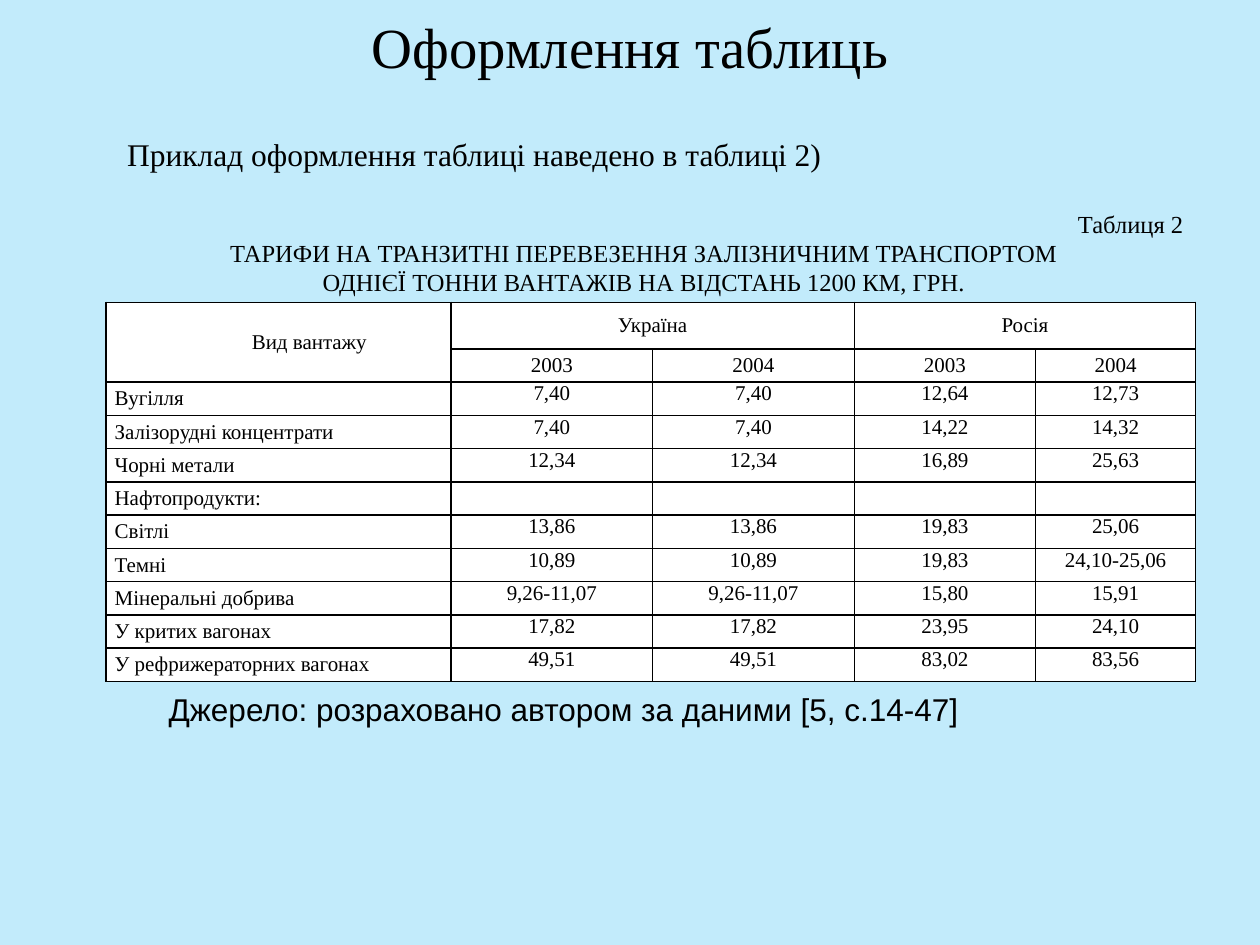
from dataclasses import dataclass

from lxml import etree
from pptx import Presentation
from pptx import util as u
from pptx.dml.color import RGBColor
from pptx.enum import text as t
from pptx.oxml import ns

COLORS = {"background": "C2EBFB", "ink": "000000", "cell": "FFFFFF"}
SERIF = "Times New Roman"
INDENT = 0.49
LEFT, CENTER, RIGHT, JUSTIFY = (
    t.PP_ALIGN.LEFT, t.PP_ALIGN.CENTER, t.PP_ALIGN.RIGHT, t.PP_ALIGN.JUSTIFY)
TOP, MIDDLE = t.MSO_ANCHOR.TOP, t.MSO_ANCHOR.MIDDLE


@dataclass
class Line:
    wording: str
    align: t.PP_ALIGN
    size: float
    font: str = SERIF
    indent: float = 0
    space_after: float = 0


@dataclass
class Block:
    left: float
    top: float
    width: float
    height: float
    lines: list[Line]
    anchor: t.MSO_ANCHOR = TOP


BLOCKS = [
    Block(0.5, 0.02, 9, 0.69, [Line("Оформлення таблиць", CENTER, 32.4)], MIDDLE),
    Block(0.42, 1.02, 9.2, 0.4, [
        Line("Приклад оформлення таблиці наведено в таблиці 2)", JUSTIFY, 18,
             indent=INDENT, space_after=6)]),
    Block(0.24, 1.6, 9.25, 0.81, [
        Line("Таблиця 2", RIGHT, 14, indent=INDENT),
        Line("ТАРИФИ НА ТРАНЗИТНІ ПЕРЕВЕЗЕННЯ ЗАЛІЗНИЧНИМ ТРАНСПОРТОМ", CENTER, 14,
             indent=INDENT),
        Line("ОДНІЄЇ ТОННИ ВАНТАЖІВ НА ВІДСТАНЬ 1200 КМ, ГРН.", CENTER, 14,
             indent=INDENT)], MIDDLE),
    Block(0.75, 5.43, 7.24, 0.4, [
        Line("Джерело: розраховано автором за даними [5, с.14-47]", JUSTIFY, 18,
             "Arial", INDENT)]),
]

COLUMN_WIDTHS = [2.74, 1.6, 1.6, 1.44, 1.27]
TABLE_HEIGHT, HEADER_HEIGHT = 3.01, 0.37
HEADER_ROWS = 2
TARIFFS = [
    ["Вид вантажу", "Україна", "", "Росія", ""],
    ["", "2003", "2004", "2003", "2004"],
    ["Вугілля", "7,40", "7,40", "12,64", "12,73"],
    ["Залізорудні концентрати", "7,40", "7,40", "14,22", "14,32"],
    ["Чорні метали", "12,34", "12,34", "16,89", "25,63"],
    ["Нафтопродукти:", "", "", "", ""],
    ["Світлі", "13,86", "13,86", "19,83", "25,06"],
    ["Темні", "10,89", "10,89", "19,83", "24,10-25,06"],
    ["Мінеральні добрива", "9,26-11,07", "9,26-11,07", "15,80", "15,91"],
    ["У критих вагонах", "17,82", "17,82", "23,95", "24,10"],
    ["У рефрижераторних вагонах", "49,51", "49,51", "83,02", "83,56"],
]
MERGES = [((0, 0), (1, 0)), ((0, 1), (0, 2)), ((0, 3), (0, 4))]


def set_attributes(target, values: dict) -> None:
    for name, value in values.items():
        setattr(target, name, value)


def write_line(paragraph, line: Line) -> None:
    set_attributes(paragraph, {
        "alignment": line.align, "space_after": u.Pt(line.space_after)})
    if line.indent:
        properties = paragraph._p.get_or_add_pPr()
        properties.set("marL", "0")
        properties.set("indent", str(u.Inches(line.indent)))
    if not line.wording:
        # An empty cell still needs its text size, or the row grows.
        etree.SubElement(paragraph._p, ns.qn("a:endParaRPr"), sz=str(line.size * 100))
        return
    run = paragraph.add_run()
    run.text = line.wording
    set_attributes(run.font, {"name": line.font, "size": u.Pt(line.size)})
    run.font.color.rgb = RGBColor.from_string(COLORS["ink"])


def add_block(slide, block: Block) -> None:
    frame = slide.shapes.add_textbox(*map(
        u.Inches, (block.left, block.top, block.width, block.height))).text_frame
    set_attributes(frame, {"word_wrap": True, "vertical_anchor": block.anchor})
    for index, line in enumerate(block.lines):
        write_line(frame.add_paragraph() if index else frame.paragraphs[0], line)


def add_borders(cell) -> None:
    """Outline the cell; the schema wants borders ahead of the fill."""
    properties = cell._tc.get_or_add_tcPr()
    for index, side in enumerate(("lnL", "lnR", "lnT", "lnB")):
        border = etree.Element(ns.qn(f"a:{side}"), w=str(u.Pt(1)))
        fill = etree.SubElement(border, ns.qn("a:solidFill"))
        etree.SubElement(fill, ns.qn("a:srgbClr"), val=COLORS["ink"])
        properties.insert(index, border)


def fill_cell(cell, row: int, column: int, wording: str) -> None:
    is_header, is_cargo = row < HEADER_ROWS, column == 0
    set_attributes(cell, {
        "margin_left": u.Inches(0.07), "margin_right": u.Inches(0.07),
        "margin_top": 0, "margin_bottom": 0,
        "vertical_anchor": MIDDLE if is_header or is_cargo else TOP})
    cell.fill.solid()
    cell.fill.fore_color.rgb = RGBColor.from_string(COLORS["cell"])
    add_borders(cell)
    write_line(cell.text_frame.paragraphs[0], Line(
        wording, LEFT if is_cargo and not is_header else CENTER, 12,
        indent=INDENT if is_header and is_cargo else 0))


def add_tariff_table(slide) -> None:
    table = slide.shapes.add_table(
        len(TARIFFS), len(COLUMN_WIDTHS), u.Inches(0.84), u.Inches(2.4),
        u.Inches(sum(COLUMN_WIDTHS)), u.Inches(TABLE_HEIGHT)).table
    set_attributes(table, {"first_row": False, "horz_banding": False})
    for column, width in zip(table.columns, COLUMN_WIDTHS):
        column.width = u.Inches(width)
    row_height = (TABLE_HEIGHT - HEADER_HEIGHT) / (len(TARIFFS) - 1)
    for index, row in enumerate(table.rows):
        row.height = u.Inches(row_height if index else HEADER_HEIGHT)
    for start, end in MERGES:
        table.cell(*start).merge(table.cell(*end))
    for row, wordings in enumerate(TARIFFS):
        for column, wording in enumerate(wordings):
            fill_cell(table.cell(row, column), row, column, wording)


def main() -> None:
    deck = Presentation()
    set_attributes(deck, {"slide_width": u.Inches(10), "slide_height": u.Inches(7.5)})
    slide = deck.slides.add_slide(deck.slide_layouts[6])
    slide.background.fill.solid()
    slide.background.fill.fore_color.rgb = RGBColor.from_string(COLORS["background"])
    add_tariff_table(slide)
    for block in BLOCKS:
        add_block(slide, block)
    deck.save("out.pptx")


if __name__ == "__main__":
    main()
